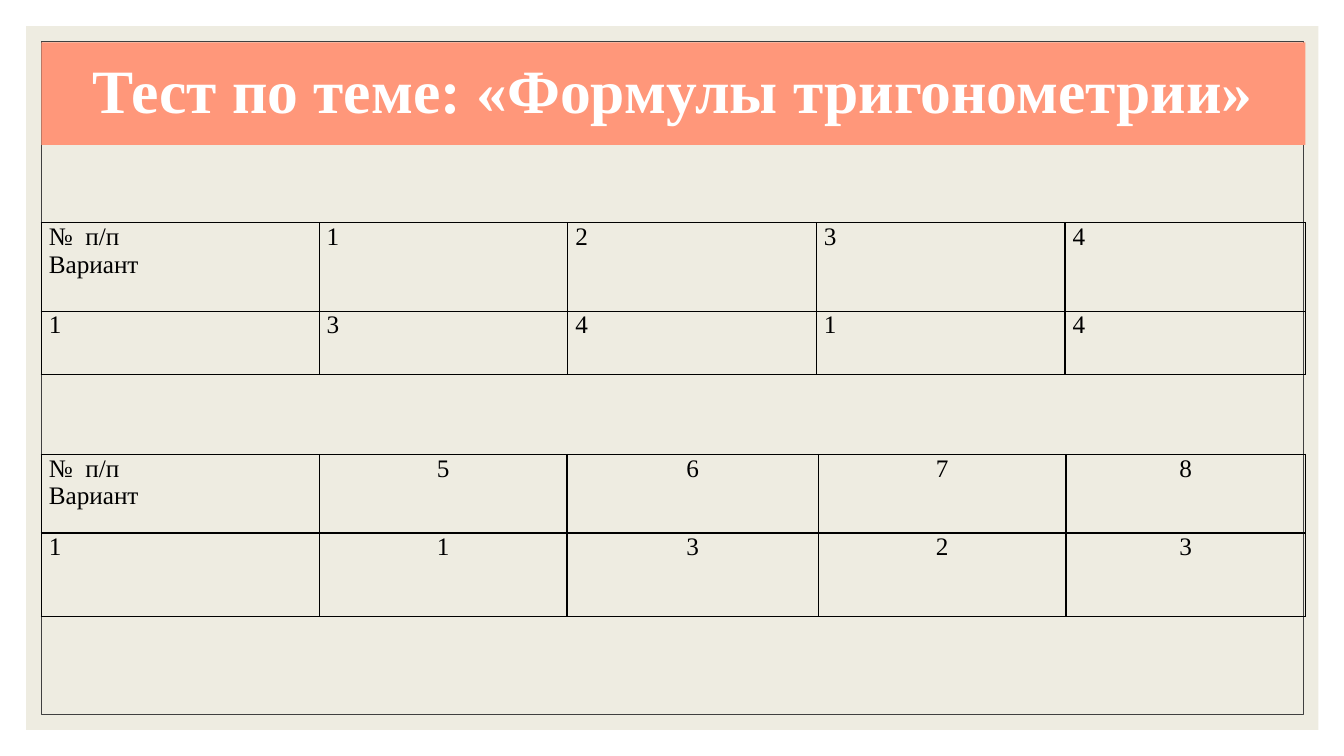
from lxml import etree
from pptx import Presentation
from pptx.dml.color import RGBColor
from pptx.enum.shapes import MSO_SHAPE
from pptx.enum.text import MSO_ANCHOR, PP_ALIGN
from pptx.oxml.ns import qn
from pptx.util import Pt

WHITE = RGBColor(0xFF, 0xFF, 0xFF)
BLACK = RGBColor(0, 0, 0)
BEIGE = RGBColor(0xEE, 0xEC, 0xE1)
CORAL = RGBColor(0xFF, 0x97, 0x7A)
DARK_GREY = RGBColor(0x40, 0x40, 0x40)
FONT = "Times New Roman"
LEFT, WIDTH = 29.5, 902.9


def add_rect(slide, left, top, width, height, fill=None, line=None):
    rect = slide.shapes.add_shape(
        MSO_SHAPE.RECTANGLE, Pt(left), Pt(top), Pt(width), Pt(height))
    rect.shadow.inherit = False
    if fill is None:
        rect.fill.background()
    else:
        rect.fill.solid()
        rect.fill.fore_color.rgb = fill
    if line is None:
        rect.line.fill.background()
    else:
        rect.line.color.rgb = line
        rect.line.width = Pt(0.5)
    return rect


def write(paragraph, text, size, color, align, bold=False):
    paragraph.alignment = align
    run = paragraph.add_run()
    run.text = text
    run.font.name = FONT
    run.font.size = Pt(size)
    run.font.color.rgb = color
    run.font.bold = bold


def add_heading(slide, text):
    heading = add_rect(slide, LEFT, 30.2, WIDTH, 73.4, fill=CORAL)
    frame = heading.text_frame
    frame.word_wrap = True
    frame.vertical_anchor = MSO_ANCHOR.MIDDLE
    frame.paragraphs[0].line_spacing = 0.9
    write(frame.paragraphs[0], text, 44, WHITE, PP_ALIGN.CENTER, bold=True)


def add_borders(cell):
    properties = cell._tc.get_or_add_tcPr()
    for position, side in enumerate(("a:lnL", "a:lnR", "a:lnT", "a:lnB")):
        border = etree.Element(qn(side), w=str(Pt(1)))
        fill = etree.SubElement(border, qn("a:solidFill"))
        etree.SubElement(fill, qn("a:srgbClr"), val=str(BLACK))
        properties.insert(position, border)


def fill_cell(cell, text, align):
    cell.fill.background()
    cell.margin_left = cell.margin_right = Pt(5.4)
    cell.margin_top = cell.margin_bottom = Pt(0)
    frame = cell.text_frame
    for number, line in enumerate(text.split("\n")):
        paragraph = frame.add_paragraph() if number else frame.paragraphs[0]
        write(paragraph, line, 18, BLACK, align)
    add_borders(cell)


def add_answers(slide, top, widths, heights, rows, answer_align):
    table = slide.shapes.add_table(
        len(rows), len(widths), Pt(LEFT), Pt(top),
        Pt(sum(widths)), Pt(sum(heights))).table
    table.first_row = table.horz_banding = False
    for column, width in zip(table.columns, widths):
        column.width = Pt(width)
    for r, (texts, height) in enumerate(zip(rows, heights)):
        table.rows[r].height = Pt(height)
        for c, text in enumerate(texts):
            align = answer_align if c else PP_ALIGN.LEFT
            fill_cell(table.cell(r, c), text, align)


def main():
    prs = Presentation()
    prs.slide_width, prs.slide_height = Pt(960), Pt(540)
    slide = prs.slides.add_slide(prs.slide_layouts[6])

    # Backdrop and thin frame
    add_rect(slide, 18.7, 18.7, 923, 502.6, fill=BEIGE)
    add_rect(slide, LEFT, 29.5, 901.4, 481, line=DARK_GREY)

    # Answers to questions 1-4
    corner = "№  п/п\nВариант"
    add_answers(slide, 159.1, [198.5, 177.6, 177.6, 177.6, 171.6], [63.2, 45.5],
                [[corner, "1", "2", "3", "4"], ["1", "3", "4", "1", "4"]],
                PP_ALIGN.LEFT)

    add_heading(slide, "Тест по теме: «Формулы тригонометрии»")

    # Answers to questions 5-8
    add_answers(slide, 324.7, [198.5, 177.1, 179.3, 177.1, 170.9], [56, 59.8],
                [[corner, "5", "6", "7", "8"], ["1", "1", "3", "2", "3"]],
                PP_ALIGN.CENTER)

    prs.save("out.pptx")


if __name__ == "__main__":
    main()
